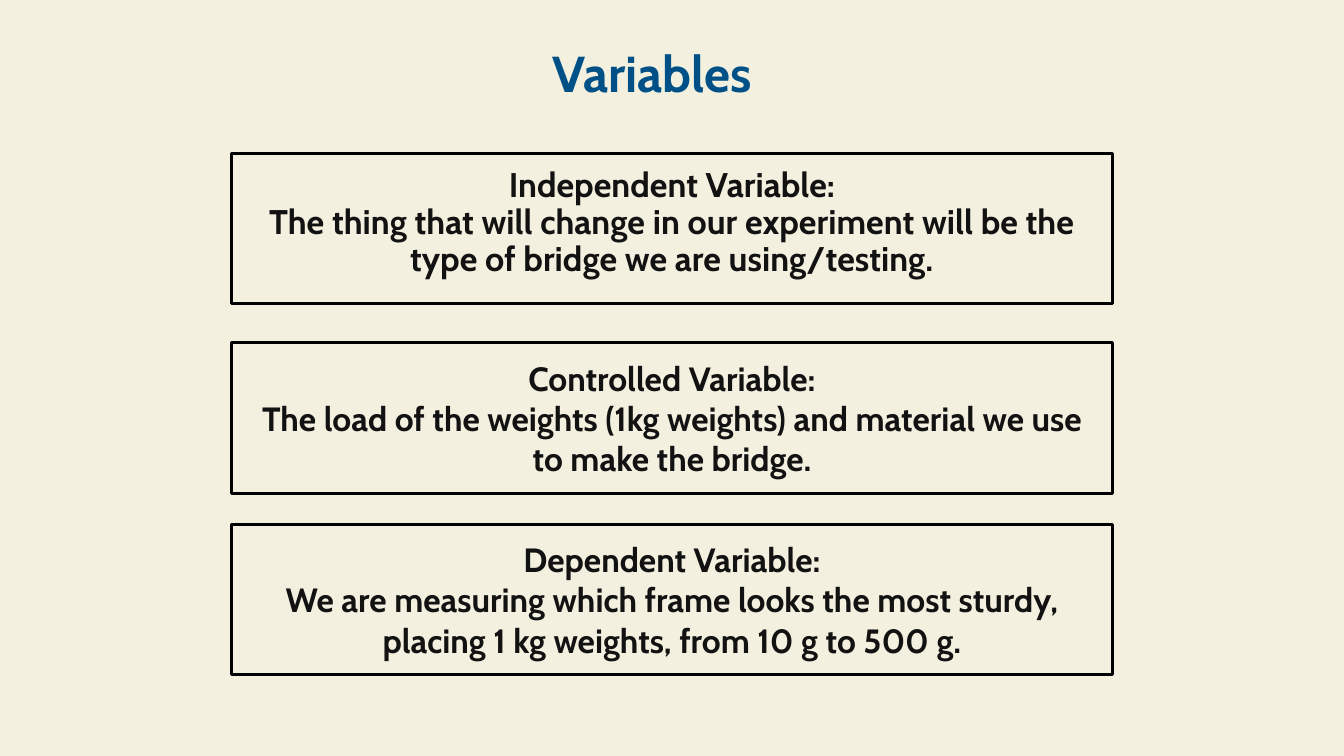
"""Build the slide on the variables of the bridge experiment."""
import pptx
import pptx.dml.color
import pptx.enum.text
import pptx.oxml.ns
import pptx.util
from lxml import etree

Inches = pptx.util.Inches
Pt = pptx.util.Pt
Align = pptx.enum.text.PP_ALIGN
Anchor = pptx.enum.text.MSO_ANCHOR


def color(code):
    return pptx.dml.color.RGBColor.from_string(code)


def write(frame, text, size, ink, font, align=Align.LEFT, anchor=Anchor.TOP,
          space=1.0, foot=0.1):
    frame.word_wrap = True
    frame.auto_size = pptx.enum.text.MSO_AUTO_SIZE.NONE
    frame.vertical_anchor = anchor
    frame.margin_left = frame.margin_right = frame.margin_top = Inches(0.1)
    frame.margin_bottom = Inches(foot)
    frame.text = text
    for para in frame.paragraphs:
        para.alignment = align
        para.line_spacing = space
        para.space_before = para.space_after = Pt(0)
        props = para._p.get_or_add_pPr()
        props.set("marL", "0")
        props.set("indent", "0")
        etree.SubElement(props, pptx.oxml.ns.qn("a:buNone"))
        for run in para.runs:
            run.font.name = font
            run.font.size = Pt(size)
            run.font.bold = True
            run.font.color.rgb = color(ink)


class Deck:
    font = "Cabin"
    paper = "F3F0DF"
    ink = "121212"
    blue = "005088"
    edge = "000000"

    def __init__(self):
        self.file = pptx.Presentation()
        self.file.slide_width = Inches(10)
        self.file.slide_height = Inches(10 * 9 / 16)
        self.slide = self.file.slides.add_slide(self.file.slide_layouts[4])
        fill = self.slide.background.fill
        fill.solid()
        fill.fore_color.rgb = color(self.paper)

    def place(self, shape, left, top, width, height):
        shape.left, shape.top = Inches(left), Inches(top)
        shape.width, shape.height = Inches(width), Inches(height)

    def title(self, text):
        shape = self.slide.shapes.title
        self.place(shape, 4.01, 0.21, 1.97, 0.57)
        write(shape.text_frame, text, 27, self.blue, self.font)

    def box(self, shape, top, head, body, size=18, **style):
        self.place(shape, 1.72, top, 6.56, 1.12)
        shape.line.color.rgb = color(self.edge)
        shape.line.width = Pt(1.5)
        write(shape.text_frame, f"{head} Variable:\n{body}", size, self.ink,
              self.font, align=Align.CENTER, anchor=Anchor.MIDDLE, **style)

    def save(self):
        for shape in list(self.slide.placeholders):
            if not shape.text_frame.text:
                shape._element.getparent().remove(shape._element)
        self.file.save("out.pptx")


def main():
    deck = Deck()
    deck.title("Variables")
    first, second, third = list(deck.slide.placeholders)[1:4]
    deck.box(first, 1.14, "Independent",
             "The thing that will change in our experiment will be the "
             "type of bridge we are using/testing.",
             size=18.3, space=0.9, foot=0.18)
    deck.box(second, 2.55, "Controlled",
             "The load of the weights (1kg weights) and material we use "
             "to make the bridge.")
    deck.box(third, 3.9, "Dependent",
             "We are measuring which frame looks the most sturdy, "
             "placing 1 kg weights, from 10 g to 500 g.")
    deck.save()


if __name__ == "__main__":
    main()
